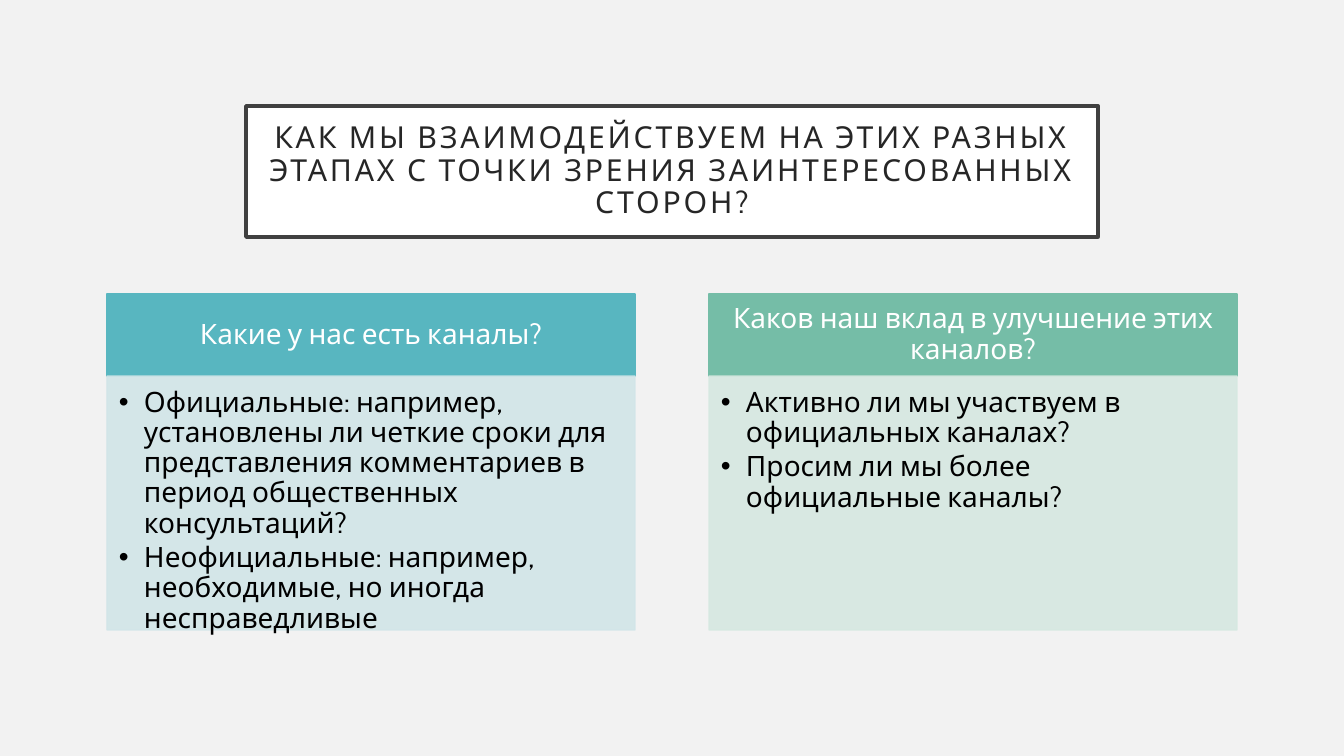
"""Build a slide comparing channels with our contribution to them."""
from lxml import etree
from pptx import Presentation
from pptx.dml.color import RGBColor
from pptx.enum.text import MSO_ANCHOR, MSO_AUTO_SIZE, PP_ALIGN
from pptx.oxml.ns import qn
from pptx.util import Emu, Pt

CENTER, LEFT = PP_ALIGN.CENTER, PP_ALIGN.LEFT
MIDDLE, TOP = MSO_ANCHOR.MIDDLE, MSO_ANCHOR.TOP
NO_FIT = MSO_AUTO_SIZE.NONE
COMPARISON = 4

THEME = {
    "font": "Cabin", "title_size": 21.6, "text_size": 20,
    "background": "F2F2F2", "title_fill": "FFFFFF", "title_line": "404040",
    "title_text": "262626", "head_text": "FFFFFF", "body_text": "000000",
    "columns": [("58B6C0", "D1E5E8"), ("75BDA7", "D6E8E1")],
}
COLUMNS = [
    ("Какие у нас есть каналы?",
     ["Официальные: например, установлены ли четкие сроки для представления "
      "комментариев в период общественных консультаций?",
      "Неофициальные: например, необходимые, но иногда несправедливые"]),
    ("Каков наш вклад в улучшение этих каналов?",
     ["Активно ли мы участвуем в официальных каналах?",
      "Просим ли мы более официальные каналы?"]),
]


def px(n):
    return Emu(round(n * 914400 / 100.8))


def fill_box(sp, box, fill, line, width, insets, lines, size, color, align, anchor):
    sp.left, sp.top, sp.width, sp.height = map(px, box)
    sp.fill.solid()
    sp.fill.fore_color.rgb = RGBColor.from_string(fill)
    sp.line.color.rgb = RGBColor.from_string(line)
    sp.line.width = Pt(width)
    tf = sp.text_frame
    tf.text = "\n".join(lines)
    tf.word_wrap = True
    tf.auto_size = NO_FIT
    tf.vertical_anchor = anchor
    tf.margin_left, tf.margin_top, tf.margin_right, tf.margin_bottom = map(px, insets)
    for p in tf.paragraphs:
        p.alignment = align
        p.line_spacing = 0.9
        p.space_before = Pt(0)
        p.font.name = THEME["font"]
        p.font.size = Pt(size)
        p.font.bold = False
        p.font.color.rgb = RGBColor.from_string(color)


prs = Presentation()
prs.slide_width, prs.slide_height = px(1344), px(756)
s = prs.slides.add_slide(prs.slide_layouts[COMPARISON])
s.background.fill.solid()
s.background.fill.fore_color.rgb = RGBColor.from_string(THEME["background"])

title = s.shapes.title
fill_box(title, (246, 106, 852, 131), THEME["title_fill"], THEME["title_line"], 2.5,
         (20, 20, 20, 20),
         ["КАК МЫ ВЗАИМОДЕЙСТВУЕМ НА ЭТИХ РАЗНЫХ ЭТАПАХ С ТОЧКИ ЗРЕНИЯ "
          "ЗАИНТЕРЕСОВАННЫХ СТОРОН?"],
         THEME["title_size"], THEME["title_text"], CENTER, MIDDLE)
for rpr in title._element.iter(qn("a:defRPr")):
    rpr.set("spc", "200")

for i, (heading, points) in enumerate(COLUMNS):
    head_fill, body_fill = THEME["columns"][i]
    left = 107 + 602 * i
    head, body = s.placeholders[1 + 2 * i], s.placeholders[2 + 2 * i]
    fill_box(head, (left, 294, 528, 82), head_fill, head_fill, 1, (16, 9, 16, 9),
             [heading], THEME["text_size"], THEME["head_text"], CENTER, MIDDLE)
    fill_box(body, (left, 376, 528, 254), body_fill, body_fill, 1, (12, 12, 16, 17),
             points, THEME["text_size"], THEME["body_text"], LEFT, TOP)
    for clr in body._element.spPr.iter(qn("a:srgbClr")):
        etree.SubElement(clr, qn("a:alpha")).set("val", "90000")
    for p in body.text_frame.paragraphs:
        p.space_after = Pt(3)
        ppr = p._p.get_or_add_pPr()
        ppr.set("marL", str(px(25)))
        ppr.set("indent", str(-px(25)))

prs.save("out.pptx")
